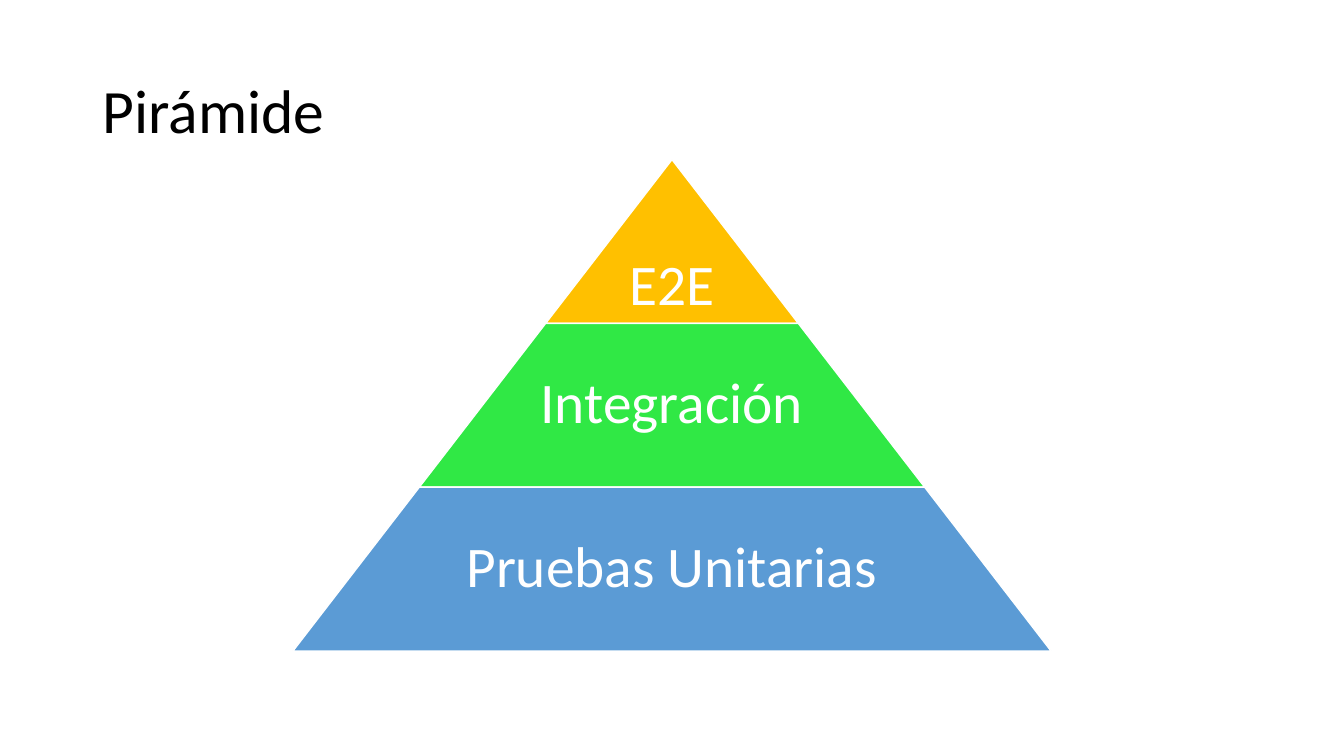
"""Build a slide with the three-tier testing pyramid."""
from dataclasses import dataclass

from pptx import Presentation
from pptx.dml.color import RGBColor as RGB
from pptx.enum.shapes import MSO_SHAPE as SHAPE
from pptx.enum.text import MSO_ANCHOR as ANCHOR, MSO_AUTO_SIZE as AUTOSIZE, PP_ALIGN as ALIGN
from pptx.util import Pt


@dataclass(frozen=True)
class Theme:
    font: str = "Calibri"
    title_size: float = 44
    label_size: float = 41
    black: str = "000000"
    white: str = "FFFFFF"
    amber: str = "FFC000"
    green: str = "30E845"
    blue: str = "5B9BD5"


class Deck:
    def __init__(self, prs, theme):
        self.theme = theme
        self.slide = prs.slides.add_slide(prs.slide_layouts[5])

    def set_text(self, tf, text, size, color, align, anchor):
        tf.text = text
        tf.word_wrap = True
        tf.auto_size = AUTOSIZE.NONE
        tf.vertical_anchor = anchor
        p = tf.paragraphs[0]
        p.alignment = align
        p.line_spacing = 0.9
        p.font.name = self.theme.font
        p.font.size = Pt(size)
        p.font.color.rgb = RGB.from_string(color)

    def title(self, text, x, y, w, h):
        sp = self.slide.shapes.title
        sp.left, sp.top, sp.width, sp.height = Pt(x), Pt(y), Pt(w), Pt(h)
        self.set_text(sp.text_frame, text, self.theme.title_size,
                      self.theme.black, ALIGN.LEFT, ANCHOR.MIDDLE)

    def tier(self, x, y, w, h, slope, color):
        sp = self.slide.shapes.add_shape(SHAPE.TRAPEZOID, Pt(x), Pt(y), Pt(w), Pt(h))
        sp.adjustments[0] = slope
        sp.shadow.inherit = False
        sp.fill.solid()
        sp.fill.fore_color.rgb = RGB.from_string(color)
        sp.line.color.rgb = RGB.from_string(self.theme.white)
        sp.line.width = Pt(1)

    def label(self, text, x, y, w, h, anchor):
        tf = self.slide.shapes.add_textbox(Pt(x), Pt(y), Pt(w), Pt(h)).text_frame
        tf.margin_left = tf.margin_right = tf.margin_top = tf.margin_bottom = Pt(4.1)
        self.set_text(tf, text, self.theme.label_size, self.theme.white, ALIGN.CENTER, anchor)

    def pyramid(self, tiers, center, top, step, height):
        for i, (text, color, share, anchor) in enumerate(tiers):
            w, y = step * (i + 1), top + height * i
            self.tier(center - w / 2, y, w, height, step / 2 / height, color)
            self.label(text, center - w * share / 2, y, w * share, height, anchor)


def main():
    prs = Presentation()
    prs.slide_width, prs.slide_height = Pt(960), Pt(540)
    theme = Theme()
    deck = Deck(prs, theme)
    deck.title("Pirámide", 66, 28.75, 828, 104.4)
    deck.pyramid([
        ("E2E", theme.amber, 1, ANCHOR.BOTTOM),
        ("Integración", theme.green, 0.65, ANCHOR.MIDDLE),
        ("Pruebas Unitarias", theme.blue, 0.65, ANCHOR.MIDDLE),
    ], center=480, top=114, step=180.5, height=117)
    prs.save("out.pptx")


if __name__ == "__main__":
    main()
